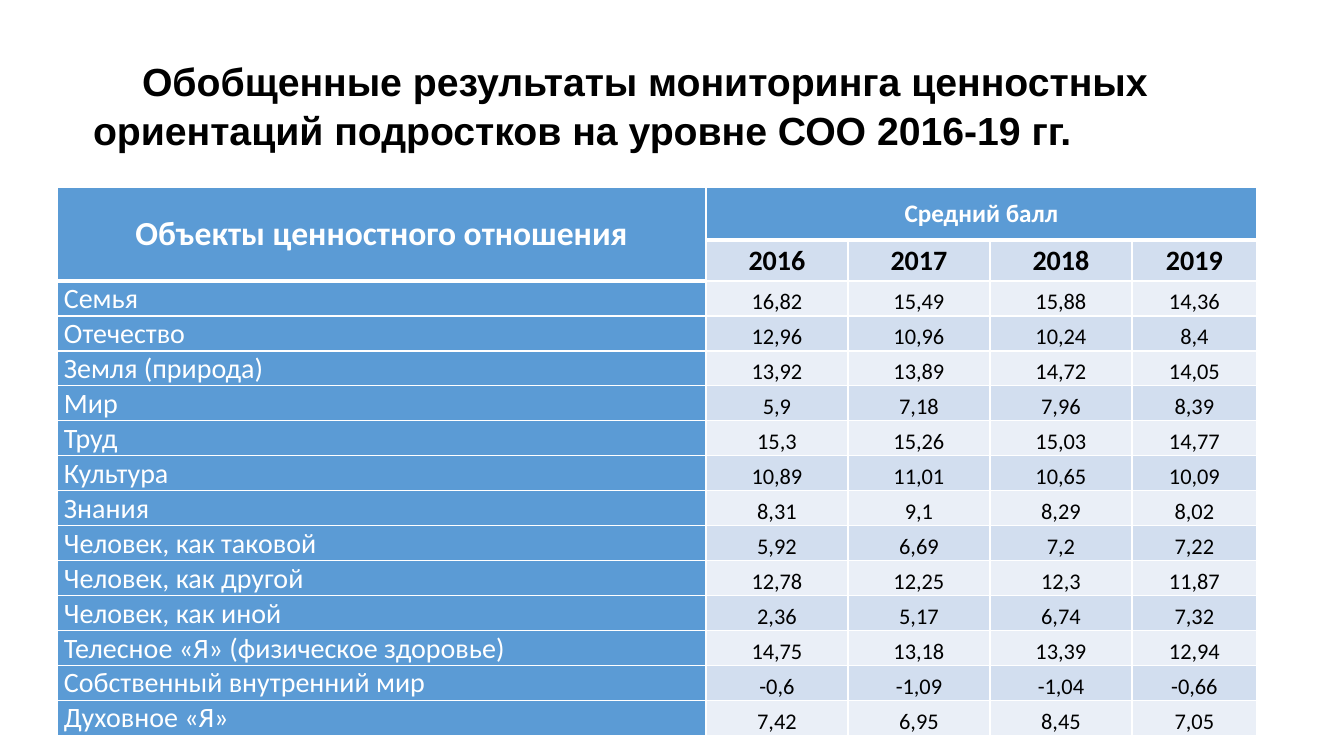
from pptx import Presentation
from pptx.dml.color import RGBColor
from pptx.enum.text import MSO_ANCHOR, MSO_AUTO_SIZE, PP_ALIGN
from pptx.oxml import parse_xml
from pptx.oxml.ns import nsdecls
from pptx.util import Pt

# Content
TITLE = ("Обобщенные результаты мониторинга ценностных "
         "ориентаций подростков на уровне СОО 2016-19 гг.")
ROWS = [
    ("Объекты ценностного отношения", "Средний балл", "", "", ""),
    ("", "2016", "2017", "2018", "2019"),
    ("Семья", "16,82", "15,49", "15,88", "14,36"),
    ("Отечество", "12,96", "10,96", "10,24", "8,4"),
    ("Земля (природа)", "13,92", "13,89", "14,72", "14,05"),
    ("Мир", "5,9", "7,18", "7,96", "8,39"),
    ("Труд", "15,3", "15,26", "15,03", "14,77"),
    ("Культура", "10,89", "11,01", "10,65", "10,09"),
    ("Знания", "8,31", "9,1", "8,29", "8,02"),
    ("Человек, как таковой", "5,92", "6,69", "7,2", "7,22"),
    ("Человек, как другой", "12,78", "12,25", "12,3", "11,87"),
    ("Человек, как иной", "2,36", "5,17", "6,74", "7,32"),
    ("Телесное «Я» (физическое здоровье)", "14,75", "13,18", "13,39", "12,94"),
    ("Собственный внутренний мир", "-0,6", "-1,09", "-1,04", "-0,66"),
    ("Духовное «Я»", "7,42", "6,95", "8,45", "7,05"),
]

# Layout in px
PAGE_SIZE = (1344, 756)
TITLE_BOX = (83, 51, 1192, 136)
TITLE_INDENT = 49
TITLE_BOTTOM_INSET = 34
TABLE_LEFT, TABLE_TOP = 57, 187
COLUMN_WIDTHS = [649, 142, 142, 142, 125]
ROW_HEIGHTS = [53, 41] + [35] * (len(ROWS) - 2)
CELL_INSET = 7

# Colours
BLUE, WHITE, BLACK = "5B9BD5", "FFFFFF", "000000"
BANDS = ("EAEFF7", "D2DEEF")


def px(length):
    return round(length * 914400 / 100.8)


def colour(value):
    return RGBColor.from_string(value)


def apply(target, values):
    for name, value in values.items():
        setattr(target, name, value)


def write(frame, text, font, size, ink, bold, align):
    para = frame.paragraphs[0]
    para.alignment = align
    span = para.add_run()
    span.text = text
    apply(span.font, {"name": font, "size": Pt(size), "bold": bold})
    span.font.color.rgb = colour(ink)
    return para


def is_header(row, column):
    return row == 0 or (row == 1 and column == 0)


def cell_style(row, column):
    """Return text size, ink, bold, alignment and anchor."""
    if row < 2:
        size = 20 if row else (18 if column else 24)
        ink = WHITE if is_header(row, column) else BLACK
        return size, ink, True, PP_ALIGN.CENTER, MSO_ANCHOR.MIDDLE
    if column == 0:
        return 20, WHITE, False, PP_ALIGN.LEFT, MSO_ANCHOR.BOTTOM
    return 16, BLACK, False, PP_ALIGN.CENTER, MSO_ANCHOR.BOTTOM


def add_borders(cell, widths):
    properties = cell._tc.get_or_add_tcPr()
    for side, width in widths.items():
        properties.append(parse_xml(
            f'<a:ln{side} {nsdecls("a")} w="{Pt(width)}"><a:solidFill>'
            f'<a:srgbClr val="{WHITE}"/></a:solidFill></a:ln{side}>'))


def add_title(page):
    title = page.shapes.title
    left, top, width, height = map(px, TITLE_BOX)
    apply(title, {"left": left, "top": top, "width": width, "height": height})
    frame = title.text_frame
    apply(frame, {"word_wrap": True, "auto_size": MSO_AUTO_SIZE.NONE,
                  "vertical_anchor": MSO_ANCHOR.MIDDLE,
                  "margin_bottom": px(TITLE_BOTTOM_INSET)})
    para = write(frame, TITLE, "Arial", 28, BLACK, True, PP_ALIGN.LEFT)
    para.line_spacing = 1.04
    para._p.get_or_add_pPr().set("indent", str(px(TITLE_INDENT)))


def add_scores(page):
    table = page.shapes.add_table(
        len(ROWS), len(COLUMN_WIDTHS), px(TABLE_LEFT), px(TABLE_TOP),
        px(sum(COLUMN_WIDTHS)), px(sum(ROW_HEIGHTS))).table
    for column, width in zip(table.columns, COLUMN_WIDTHS):
        column.width = px(width)
    for row, height in zip(table.rows, ROW_HEIGHTS):
        row.height = px(height)

    # Header spans
    table.cell(0, 0).merge(table.cell(1, 0))
    table.cell(0, 1).merge(table.cell(0, 4))

    # Cells
    for r, texts in enumerate(ROWS):
        for c, text in enumerate(texts):
            cell = table.cell(r, c)
            size, ink, bold, align, anchor = cell_style(r, c)
            apply(cell, {"margin_left": px(CELL_INSET),
                         "margin_right": px(CELL_INSET),
                         "margin_top": 0, "margin_bottom": 0,
                         "vertical_anchor": anchor})
            below_header = r > 0 and is_header(r - 1, c)
            add_borders(cell, {"L": 1, "R": 1, "T": 3 if below_header else 1,
                               "B": 3 if is_header(r, c) else 1})
            cell.fill.solid()
            shade = BLUE if c == 0 or r == 0 else BANDS[r % 2]
            cell.fill.fore_color.rgb = colour(shade)
            if text:
                write(cell.text_frame, text, "Calibri", size, ink, bold, align)


def main():
    deck = Presentation()
    deck.slide_width, deck.slide_height = map(px, PAGE_SIZE)
    page = deck.slides.add_slide(deck.slide_layouts[5])
    add_scores(page)
    add_title(page)
    deck.save("out.pptx")


if __name__ == "__main__":
    main()
